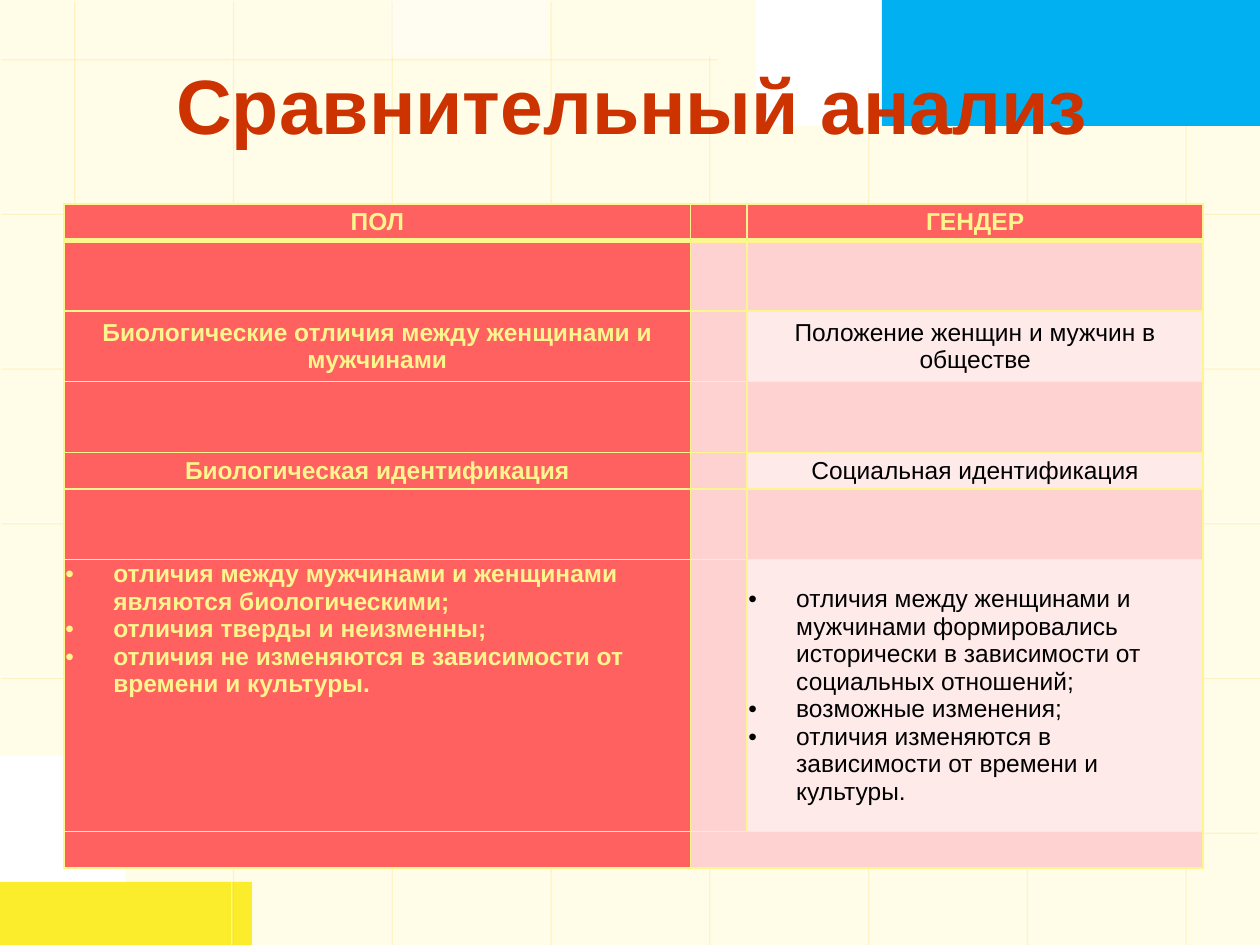
from lxml.etree import SubElement
from pptx import Presentation
from pptx.dml.color import RGBColor as Rgb
from pptx.enum.shapes import MSO_CONNECTOR as Conn, MSO_SHAPE as Shape
from pptx.enum.text import MSO_ANCHOR as Anchor, PP_ALIGN as Align
from pptx.oxml.ns import qn
from pptx.util import Inches, Pt

COLORS = {
    "cream": "FFFDE8", "yellow": "FBED2C", "blue": "00B0F0",
    "white": "FFFFFF", "glow": "FFC319", "title": "CC3300",
    "red": "FF6161", "pink": "FFD2D2", "pale": "FFEAEA",
    "edge": "FDF58D", "black": "000000",
}
COLS = [4.97, 0.45, 3.62]
ROWS = [0.29, 0.56, 0.56, 0.56, 0.29, 0.56, 2.16, 0.29]
TEXTS = {
    (0, 0): ["ПОЛ"],
    (0, 2): ["ГЕНДЕР"],
    (2, 0): ["Биологические отличия между женщинами и мужчинами"],
    (2, 2): ["Положение женщин и мужчин в обществе"],
    (4, 0): ["Биологическая идентификация"],
    (4, 2): ["Социальная идентификация"],
    (6, 0): ["отличия между мужчинами и женщинами являются биологическими;",
             "отличия тверды и неизменны;",
             "отличия не изменяются в зависимости от времени и культуры."],
    (6, 2): ["отличия между женщинами и мужчинами формировались исторически "
             "в зависимости от социальных отношений;",
             "возможные изменения;",
             "отличия изменяются в зависимости от времени и культуры."],
}


def color(name):
    return Rgb.from_string(COLORS[name])


def fade(shape, alpha):
    """Make the colours of a shape show at alpha percent."""
    for node in shape.element.spPr.iter(qn("a:srgbClr")):
        SubElement(node, qn("a:alpha"), val=str(alpha * 1000))


def paint(shape, name):
    shape.shadow.inherit = False
    shape.fill.solid()
    shape.fill.fore_color.rgb = color(name)
    shape.line.fill.background()


def curve(a, b, c, d, steps=30):
    """Points of a cubic Bezier curve, both ends included."""
    points = []
    for i in range(steps + 1):
        t = i / steps
        u = 1 - t
        points.append(tuple(
            u**3 * p + 3 * u * u * t * q + 3 * u * t * t * r + t**3 * s
            for p, q, r, s in zip(a, b, c, d)))
    return points


def add_area(slide, points, name):
    form = slide.shapes.build_freeform(*points[0], scale=Inches(1))
    form.add_line_segments(points[1:], close=True)
    paint(form.convert_to_shape(), name)


def add_rule(slide, x1, y1, x2, y2):
    """Draw a faint white grid line with a golden shadow."""
    ends = [Inches(v) for v in (x1, y1, x2, y2)]
    rule = slide.shapes.add_connector(Conn.STRAIGHT, *ends)
    rule.line.color.rgb = color("white")
    rule.line.width = Pt(0.75)
    fade(rule, 50)
    effects = SubElement(rule.element.spPr, qn("a:effectLst"))
    glow = SubElement(effects, qn("a:outerShdw"), blurRad="0",
                      dist=str(Pt(1.4)), dir=str(45 * 60000))
    tint = SubElement(glow, qn("a:srgbClr"), val=COLORS["glow"])
    SubElement(tint, qn("a:alpha"), val="35000")


def add_tile(slide, x, y, height, alpha):
    tile = slide.shapes.add_shape(
        Shape.RECTANGLE, Inches(x), Inches(y), Inches(1.23), Inches(height))
    paint(tile, "white")
    fade(tile, alpha)


def add_decor(slide):
    sheet = [(10, 1.05), (10, 7.5)]
    sheet += curve((1.88, 7.5), (0.55, 6.62), (0.02, 5.82), (0.02, 5.82))
    sheet += [(0, 0)]
    sheet += curve((4.22, 0.02), (4.22, 0.02), (5.38, 0.7), (10, 1.05))
    add_area(slide, sheet, "cream")
    corner = curve((1.57, 7.5), (1.57, 7.5), (0.86, 7.18), (0, 6.02))
    add_area(slide, [(0, 7.5)] + corner, "yellow")

    tops = [0, 0, 0, 0, 0.43, 0.68, 0.85, 0.98]
    for i, top in enumerate(tops):
        x = 0.58 + 1.26 * i
        add_rule(slide, x, top, x, 7.5 if i else 6.46)
    spans = [(0, 5.68)] + [(0, 10)] * 4 + [(0.76, 9.97)]
    for i, (left, right) in enumerate(spans):
        y = 0.46 + 1.228 * i
        add_rule(slide, right, y, left, y)

    add_tile(slide, 4.38, 2.94, 1.18, 25)
    add_tile(slide, 3.11, 0, 0.44, 40)
    add_tile(slide, 3.12, 5.4, 1.18, 30)
    wave = curve((4.42, 0), (4.42, 0), (6.74, 0.69), (10, 0.81))
    add_area(slide, wave + [(10, 0)], "blue")


def style(para, size, name, bold):
    for run in para.runs:
        font = run.font
        font.name, font.size, font.bold = "Arial", Pt(size), bold
        font.color.rgb = color(name)


def add_title(slide, text):
    title = slide.shapes.title
    title.left, title.top = Inches(1.3), Inches(0.02)
    title.width, title.height = Inches(8.5), Inches(1.61)
    frame = title.text_frame
    frame.text = text
    frame.vertical_anchor = Anchor.MIDDLE
    frame.paragraphs[0].alignment = Align.LEFT
    style(frame.paragraphs[0], 44, "title", True)
    title.element.getparent().append(title.element)  # bring to front


def add_bullet(para):
    props = para._p.get_or_add_pPr()
    props.set("marL", str(Inches(0.38)))
    props.set("indent", str(Inches(-0.38)))
    SubElement(props, qn("a:buFont"), typeface="Arial")
    SubElement(props, qn("a:buChar"), char="•")
    tabs = SubElement(props, qn("a:tabLst"))
    SubElement(tabs, qn("a:tab"), pos=str(Inches(0.5)), algn="l")


def add_edges(cell, row):
    """Draw the four cell borders, thick below the header row."""
    props = cell._tc.get_or_add_tcPr()
    thick = {"lnB": row == 0, "lnT": row == 1}
    for side in ("lnL", "lnR", "lnT", "lnB"):
        width = Pt(3 if thick.get(side) else 1)
        line = SubElement(props, qn("a:" + side), w=str(width))
        fill = SubElement(line, qn("a:solidFill"))
        SubElement(fill, qn("a:srgbClr"), val=COLORS["edge"])


def fill_cell(cell, row, col):
    lines = TEXTS.get((row, col), [])
    head = row == 0 or col == 0
    add_edges(cell, row)
    cell.fill.solid()
    back = "red" if head else "pale" if lines else "pink"
    cell.fill.fore_color.rgb = color(back)
    cell.margin_left = cell.margin_right = Inches(0.01)
    cell.margin_top = cell.margin_bottom = Inches(0.01)
    top = len(lines) > 1 and col == 0
    cell.vertical_anchor = Anchor.TOP if top else Anchor.MIDDLE
    frame = cell.text_frame
    frame.text = "\n".join(lines)
    for para in frame.paragraphs:
        if len(lines) > 1:
            add_bullet(para)
        elif lines:
            para.alignment = Align.CENTER
        else:  # keeps short empty rows from growing
            SubElement(para._p, qn("a:endParaRPr"), sz="1400")
        style(para, 14, "edge" if head else "black", head)


def add_grid(slide):
    frame = slide.shapes.add_table(
        len(ROWS), len(COLS), Inches(0.51), Inches(1.62),
        Inches(sum(COLS)), Inches(sum(ROWS)))
    table = frame.table
    table.first_row = table.horz_banding = False
    for col, width in zip(table.columns, COLS):
        col.width = Inches(width)
    for r, height in enumerate(ROWS):
        table.rows[r].height = Inches(height)
        for c in range(len(COLS)):
            fill_cell(table.cell(r, c), r, c)
    last = len(ROWS) - 1
    table.cell(last, 1).merge(table.cell(last, 2))


def main():
    prs = Presentation()
    prs.slide_width, prs.slide_height = Inches(10), Inches(7.5)
    slide = prs.slides.add_slide(prs.slide_layouts[5])
    add_decor(slide)
    add_title(slide, "Сравнительный анализ")
    add_grid(slide)
    prs.save("out.pptx")


if __name__ == "__main__":
    main()
